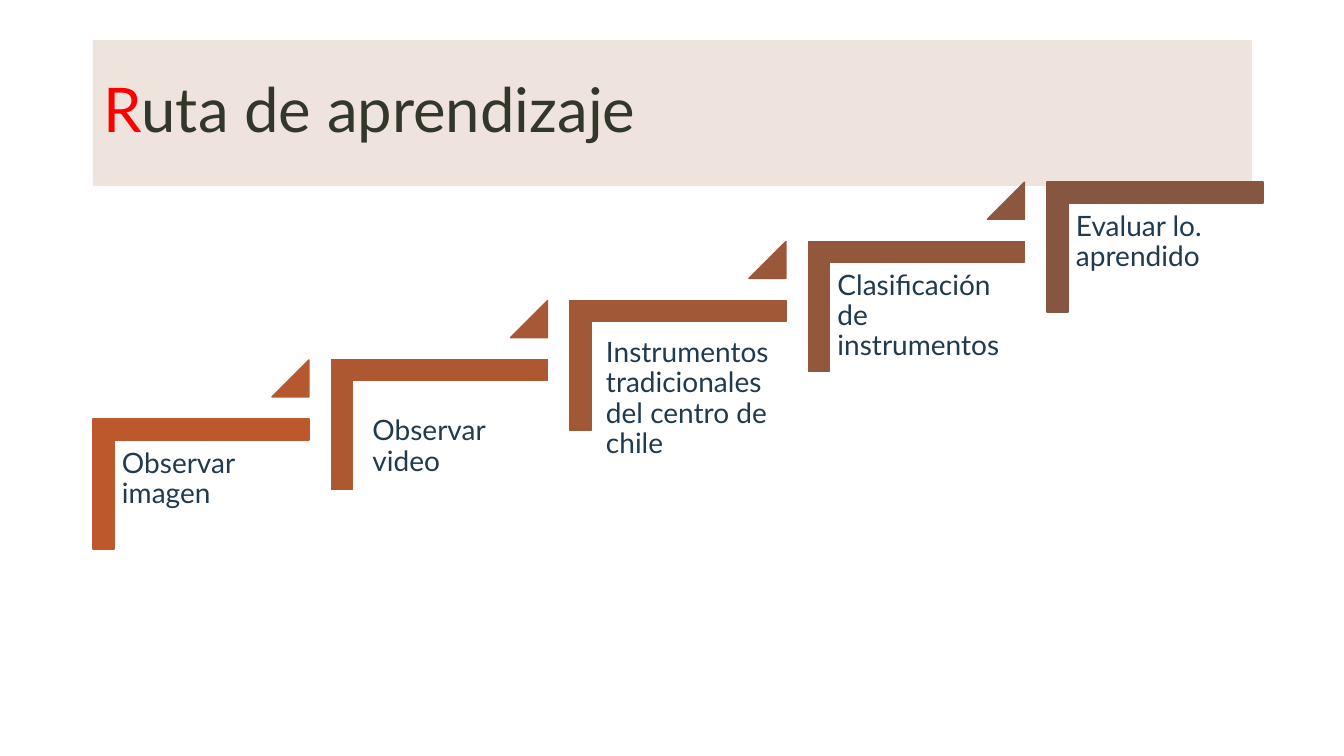
from lxml.etree import SubElement
from pptx import Presentation
from pptx.dml.color import RGBColor
from pptx.enum.shapes import MSO_SHAPE
from pptx.enum.text import MSO_ANCHOR, MSO_AUTO_SIZE, PP_ALIGN
from pptx.oxml.ns import qn
from pptx.util import Pt

TITLE = ("R", "uta de aprendizaje")
STEPS = [
    ("Observar imagen", -22, 65),
    ("Observar video", -10, 92),
    ("Instrumentos tradicionales del centro de chile", -15, 73),
    ("Clasificación de instrumentos", -22, 65),
    ("Evaluar lo. aprendido", -22, 65),
]
STAIRS = [RGBColor.from_string(c) for c in ("BD582C", "AE5832", "A05837", "93573C", "865640")]
WEDGES = [RGBColor.from_string(c) for c in ("B6582F", "A75835", "9A573A", "8C573E")]
BAND = RGBColor(0xEB, 0xDC, 0xD5)
RED = RGBColor(0xFF, 0x00, 0x00)
OLIVE = RGBColor(0x31, 0x38, 0x29)
NAVY = RGBColor(0x20, 0x3A, 0x4E)
FONT = "Lato"
WIDE, HIGH = 1344, 756
LEFT, TOP = 136, 376
RUN, RISE = 954, 237
SCALE = 914400 / 100.8


def px(*nums):
    return [round(n * SCALE) for n in nums]


def style(run, size, color):
    run.font.name = FONT
    run.font.size = Pt(size)
    run.font.color.rgb = color


def add_block(slide, kind, box, color):
    block = slide.shapes.add_shape(kind, *px(*box))
    block.shadow.inherit = False
    block.fill.solid()
    block.fill.fore_color.rgb = color
    block.line.color.rgb = color
    block.line.width = Pt(1)
    return block


def add_stair(slide, x, y, color):
    stair = add_block(slide, MSO_SHAPE.RECTANGLE, (x, y, 130, 216), color)
    stair.rotation = 90
    geom = stair._element.spPr.find(qn("a:prstGeom"))
    geom.set("prst", "corner")
    guides = geom.find(qn("a:avLst"))
    for name in ("adj1", "adj2"):
        SubElement(guides, qn("a:gd"), name=name, fmla="val 16100")


def add_wedge(slide, x, y, color):
    wedge = add_block(slide, MSO_SHAPE.ISOSCELES_TRIANGLE, (x, y, 37, 37), color)
    wedge.adjustments[0] = 1


def add_title(slide):
    title = slide.shapes.title
    title.left, title.top, title.width, title.height = px(93, 40, 1159, 146)
    title.fill.solid()
    title.fill.fore_color.rgb = BAND
    tint = title._element.spPr.find(qn("a:solidFill"))[0]
    SubElement(tint, qn("a:alpha"), val="80000")
    frame = title.text_frame
    frame.auto_size = MSO_AUTO_SIZE.NONE
    frame.vertical_anchor = MSO_ANCHOR.MIDDLE
    para = frame.paragraphs[0]
    para.alignment = PP_ALIGN.LEFT
    para.line_spacing = 0.9
    for text, color in zip(TITLE, (RED, OLIVE)):
        run = para.add_run()
        run.text = text
        style(run, 44, color)


def add_label(slide, text, x, y):
    label = slide.shapes.add_textbox(*px(x, y, 195, 170))
    frame = label.text_frame
    frame.word_wrap = True
    pad = px(8)[0]
    frame.margin_left = frame.margin_right = pad
    frame.margin_top = frame.margin_bottom = pad
    frame.text = text
    para = frame.paragraphs[0]
    para.line_spacing = 0.9
    style(para.runs[0], 20, NAVY)


def main():
    deck = Presentation()
    deck.slide_width, deck.slide_height = px(WIDE, HIGH)
    slide = deck.slides.add_slide(deck.slide_layouts[5])
    add_title(slide)
    last = len(STEPS) - 1
    for i, (text, dx, dy) in enumerate(STEPS):
        x = LEFT + RUN * i / last
        y = TOP - RISE * i / last
        add_stair(slide, x, y, STAIRS[i])
        add_label(slide, text, x + dx, y + dy)
        if i < last:
            add_wedge(slide, x + 136, y - 16, WEDGES[i])
    deck.save("out.pptx")


if __name__ == "__main__":
    main()
